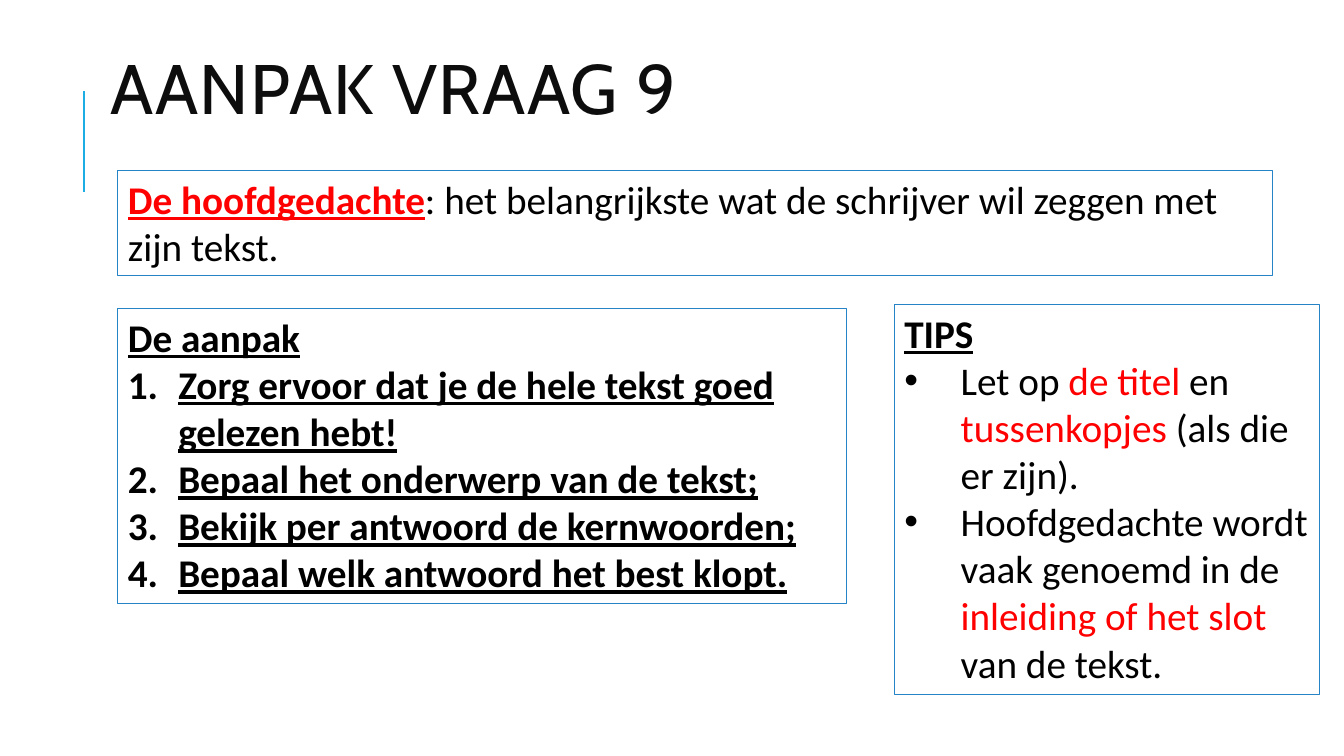
"""Build the slide on how to tackle question 9."""
from lxml.etree import SubElement
from pptx import Presentation
from pptx.dml.color import RGBColor
from pptx.enum.shapes import MSO_CONNECTOR, MSO_SHAPE
from pptx.enum.text import MSO_ANCHOR, MSO_AUTO_SIZE, PP_ALIGN
from pptx.oxml.ns import qn
from pptx.util import Inches, Pt

TITLE = "AANPAK VRAAG 9"
MAIN = [
    (None, [("De hoofdgedachte", "key"),
            (": het belangrijkste wat de schrijver wil zeggen met zijn tekst.", "body")]),
]
STEPS = [(None, [("De aanpak", "head")])] + [
    ("num", [(step, "head")]) for step in (
        "Zorg ervoor dat je de hele tekst goed gelezen hebt!",
        "Bepaal het onderwerp van de tekst;",
        "Bekijk per antwoord de kernwoorden;",
        "Bepaal welk antwoord het best klopt.",
    )
]
TIPS = [
    (None, [("TIPS", "head")]),
    ("dot", [("Let op ", "body"), ("de titel", "red"), (" en ", "body"),
             ("tussenkopjes ", "red"), ("(als die er zijn).", "body")]),
    ("dot", [("Hoofdgedachte wordt vaak genoemd in de ", "body"),
             ("inleiding of het slot ", "red"), ("van de tekst.", "body")]),
]

WIDE, HIGH = 13.33, 7.5
LEFT = 1.17
BOXES = [
    (MAIN, (LEFT, 1.69, 11.45, 1.04)),
    (STEPS, (LEFT, 3.06, 7.23, 2.93)),
    (TIPS, (8.87, 3.02, 4.22, 3.87)),
]
HEAD = (1, 0.12, 10.63, 1.64)
RULE = (0.83, 1.9, 0.83, 0.9)

THEME = {
    "rule": "1CADE4", "edge": "2683C6", "title": "0D0D0D",
    "ink": "000000", "red": "FF0000",
    "face": "Calibri", "display": "Cabin", "size": 28, "big": 50,
}
BODY = {"name": THEME["face"], "size": Pt(THEME["size"]), "bold": False, "underline": False}
BOLD = BODY | {"bold": True, "underline": True}
STYLES = {
    "body": (BODY, THEME["ink"]),
    "red": (BODY, THEME["red"]),
    "head": (BOLD, THEME["ink"]),
    "key": (BOLD, THEME["red"]),
    "title": ({"name": THEME["display"], "size": Pt(THEME["big"]), "bold": False}, THEME["title"]),
}
MARKS = {
    "num": (0.5, [("buFont", {"typeface": "+mj-lt"}), ("buAutoNum", {"type": "arabicPeriod"})]),
    "dot": (0.56, [("buFont", {"typeface": "Arial"}), ("buChar", {"char": "•"})]),
}


def apply(item, values):
    for name, value in values.items():
        setattr(item, name, value)


def place(item, spot):
    apply(item, dict(zip(("left", "top", "width", "height"), map(Inches, spot))))


def write(para, text, style):
    run = para.add_run()
    run.text = text
    values, color = STYLES[style]
    apply(run.font, values)
    run.font.color.rgb = RGBColor.from_string(color)
    return run


def stroke(line, color, width):
    line.color.rgb = RGBColor.from_string(color)
    line.width = Pt(width)


def mark(para, kind):
    indent, parts = MARKS[kind]
    props = para._p.get_or_add_pPr()
    props.set("marL", str(Inches(indent)))
    props.set("indent", str(-Inches(indent)))
    for tag, values in parts:
        SubElement(props, qn("a:" + tag), values)


def add_box(slide, lines, spot):
    box = slide.shapes.add_shape(MSO_SHAPE.RECTANGLE, *map(Inches, spot))
    box.shadow.inherit = False
    box.fill.background()
    stroke(box.line, THEME["edge"], 0.75)
    frame = box.text_frame
    apply(frame, {"word_wrap": True, "vertical_anchor": MSO_ANCHOR.TOP,
                  "auto_size": MSO_AUTO_SIZE.SHAPE_TO_FIT_TEXT})
    for row, (kind, runs) in enumerate(lines):
        para = frame.add_paragraph() if row else frame.paragraphs[0]
        para.alignment = PP_ALIGN.LEFT
        if kind:
            mark(para, kind)
        for text, style in runs:
            write(para, text, style)


def add_title(slide):
    title = slide.shapes.title
    place(title, HEAD)
    frame = title.text_frame
    apply(frame, {"word_wrap": True, "vertical_anchor": MSO_ANCHOR.MIDDLE,
                  "auto_size": MSO_AUTO_SIZE.NONE})
    para = frame.paragraphs[0]
    apply(para, {"alignment": PP_ALIGN.LEFT, "line_spacing": 0.8})
    run = write(para, TITLE, "title")
    run.font._element.set("spc", "100")


def add_rule(slide):
    rule = slide.shapes.add_connector(MSO_CONNECTOR.STRAIGHT, *map(Inches, RULE))
    stroke(rule.line, THEME["rule"], 1.5)
    SubElement(rule._element.spPr, qn("a:effectLst"))


def main():
    deck = Presentation()
    apply(deck, {"slide_width": Inches(WIDE), "slide_height": Inches(HIGH)})
    slide = deck.slides.add_slide(deck.slide_layouts[5])
    add_rule(slide)
    add_title(slide)
    for lines, spot in BOXES:
        add_box(slide, lines, spot)
    deck.save("out.pptx")


if __name__ == "__main__":
    main()
